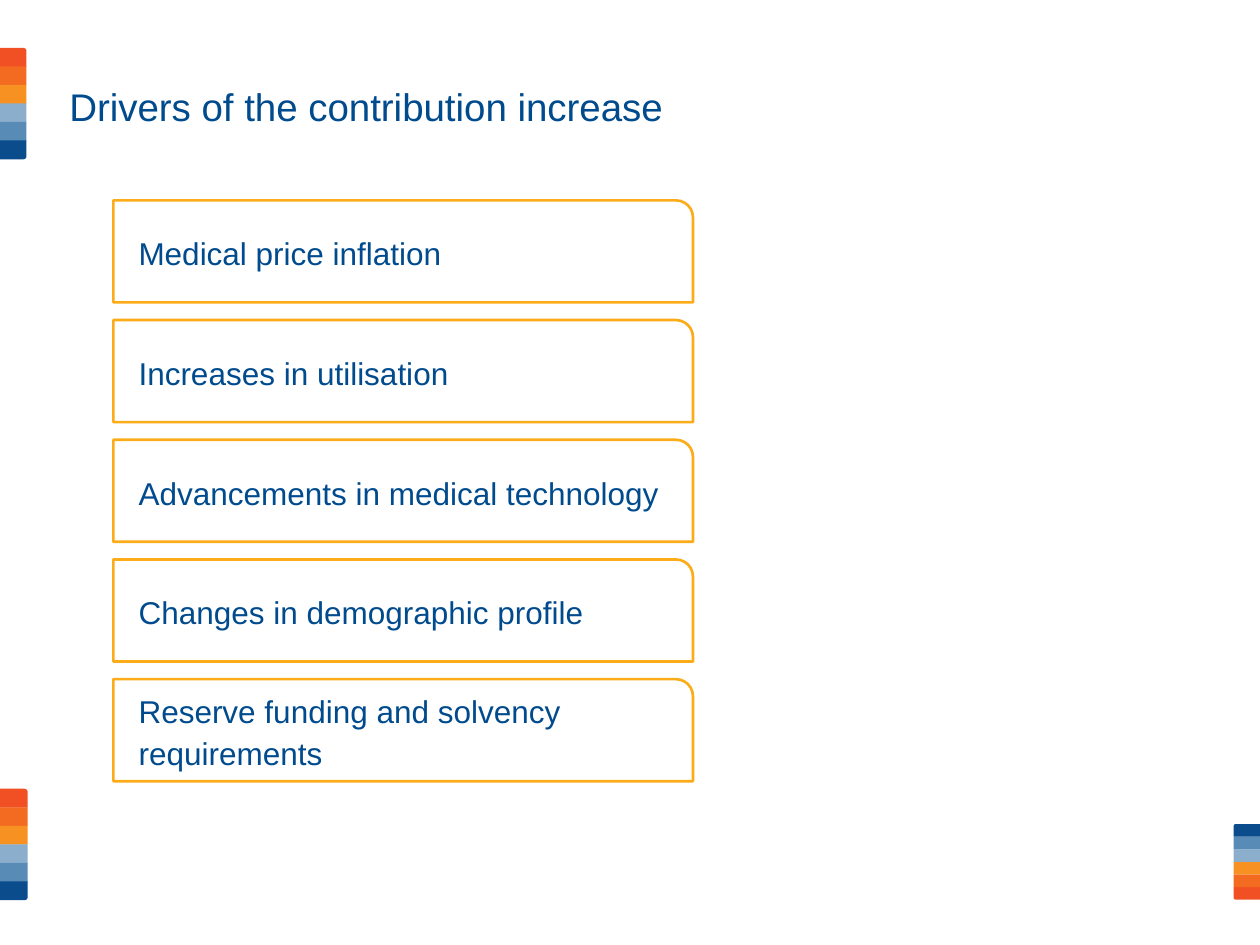
from pptx import Presentation
from pptx.dml.color import RGBColor
from pptx.enum.shapes import MSO_SHAPE as Preset
from pptx.enum.text import MSO_ANCHOR as Anchor, PP_ALIGN as Align
from pptx.oxml.ns import qn
from pptx.util import Inches, Pt

TITLE = "Drivers of the contribution increase"
DRIVERS = [
    "Medical price inflation",
    "Increases in utilisation",
    "Advancements in medical technology",
    "Changes in demographic profile",
    "Reserve funding and solvency requirements",
]
BAND_COLOURS = ["F15024", "F36B21", "F79122", "8BAECC", "588BB6", "0B4C8C"]
# left, top of first band, width, band height, step, rotation
STACKS = [
    (-0.01, 0.38, 0.22, 0.15, 0.147, 0),
    (9.79, 7.04, 0.21, 0.1, -0.1, 180),
    (0, 6.26, 0.22, 0.15, 0.147, 0),
]
NAVY, AMBER, WHITE = "004B8D", "FBAC18", "FFFFFF"
CARD_LEFT, CARD_TOP, CARD_WIDTH, CARD_HEIGHT, CARD_STEP = 0.9, 1.59, 4.6, 0.81, 0.95


def colour(hex_text):
    """Turn a hex string into a colour."""
    return RGBColor.from_string(hex_text)


def add_tab(slide, left, top, width, height, fill):
    """Add a filled rectangle with one rounded corner."""
    tab = slide.shapes.add_shape(
        Preset.ROUND_1_RECTANGLE, *map(Inches, (left, top, width, height)))
    tab.shadow.inherit = False
    tab.fill.solid()
    tab.fill.fore_color.rgb = colour(fill)
    tab.line.fill.background()
    return tab


def add_stack(slide, left, top, width, height, step, rotation):
    """Add a stack of colour bands rounded only at its two outer ends."""
    last = len(BAND_COLOURS) - 1
    for row, fill in enumerate(BAND_COLOURS):
        band = add_tab(slide, left, top + row * step, width, height, fill)
        band.rotation = rotation
        if 0 < row < last:
            band.adjustments[0] = 0
        elif row == last:
            band.element.spPr.find(qn("a:xfrm")).set("flipV", "1")


def write(shape, text, size, right_inset):
    """Set left-aligned navy text, centred vertically."""
    frame = shape.text_frame
    frame.text = text
    frame.word_wrap = True
    frame.vertical_anchor = Anchor.MIDDLE
    frame.margin_left, frame.margin_right = Inches(0.2), Inches(right_inset)
    frame.margin_top = frame.margin_bottom = Inches(0.05)
    paragraph = frame.paragraphs[0]
    paragraph.alignment = Align.LEFT
    paragraph.font.size = Pt(size)
    paragraph.font.name = "Arial"
    paragraph.font.color.rgb = colour(NAVY)
    return paragraph


def main():
    """Build the slide and save it."""
    deck = Presentation()
    deck.slide_width, deck.slide_height = Inches(10), Inches(7.5)
    slide = deck.slides.add_slide(deck.slide_layouts[5])

    for stack in STACKS:
        add_stack(slide, *stack)

    title = slide.shapes.title
    title.left, title.top, title.width, title.height = map(
        Inches, (0.35, 0.38, 7.33, 0.92))
    write(title, TITLE, 22, 0.1)

    for row, driver in enumerate(DRIVERS):
        card = add_tab(slide, CARD_LEFT, CARD_TOP + row * CARD_STEP,
                       CARD_WIDTH, CARD_HEIGHT, WHITE)
        card.line.color.rgb = colour(AMBER)
        card.line.width = Pt(1.5)
        write(card, driver, 18, 0.2).line_spacing = 1.1

    deck.save("out.pptx")


if __name__ == "__main__":
    main()
